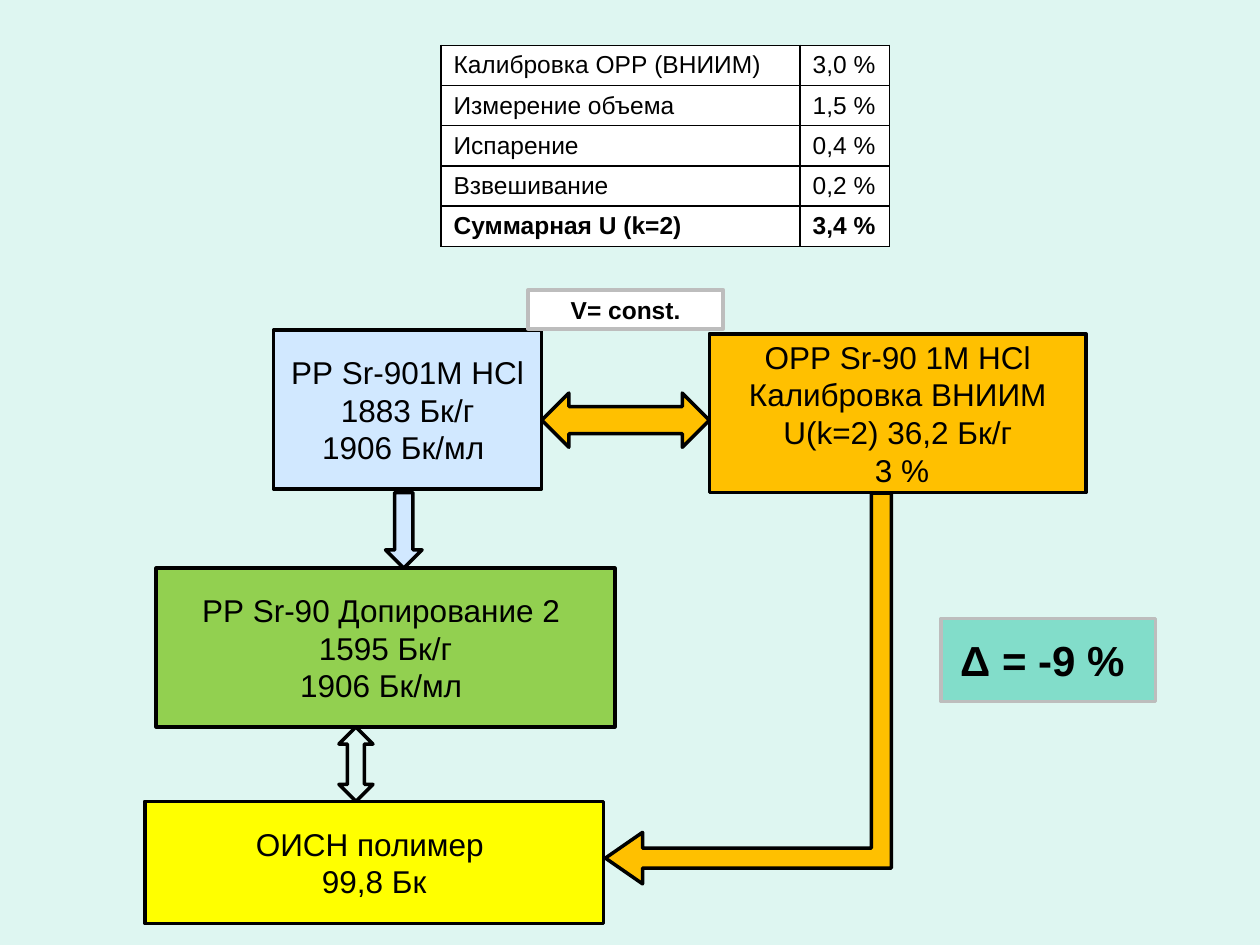
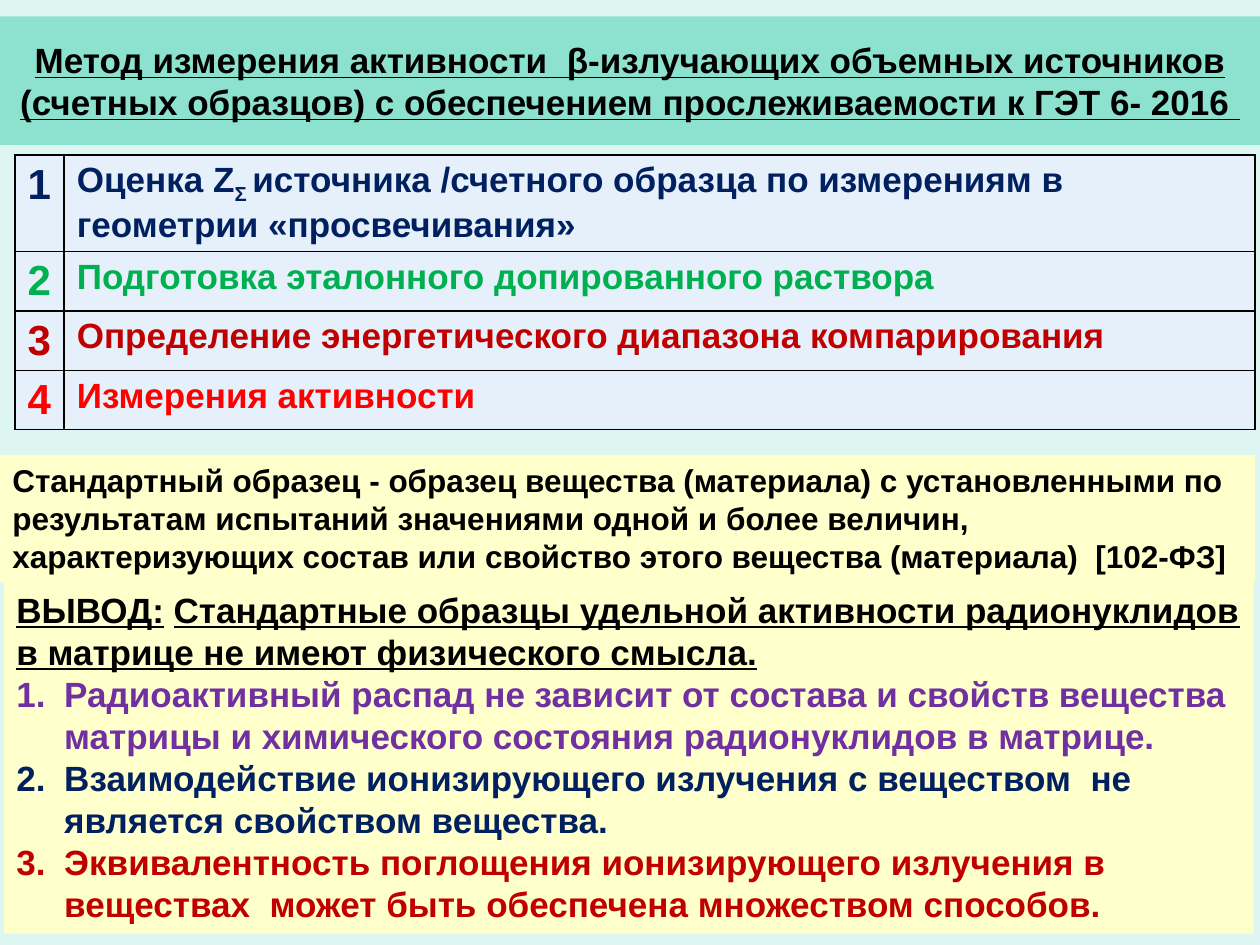
from dataclasses import dataclass
from typing import Optional

import pptx
import pptx.util
import pptx.dml.color
import pptx.enum.shapes
import pptx.enum.text
import pptx.oxml
import pptx.oxml.ns
import pptx.oxml.xmlchemy

RGBColor = pptx.dml.color.RGBColor
SHAPE = pptx.enum.shapes.MSO_SHAPE
ALIGN = pptx.enum.text.PP_ALIGN
ANCHOR = pptx.enum.text.MSO_ANCHOR
qn = pptx.oxml.ns.qn

BLACK = RGBColor(0x00, 0x00, 0x00)
WHITE = RGBColor(0xFF, 0xFF, 0xFF)
GREY = RGBColor(0xBD, 0xBD, 0xBD)
MINT = RGBColor(0xDE, 0xF6, 0xF1)
TEAL = RGBColor(0x82, 0xDD, 0xCA)
TITLE_TEAL = RGBColor(0x8C, 0xE1, 0xCF)
ORANGE = RGBColor(0xFF, 0xC0, 0x00)
SKY = RGBColor(0xD1, 0xE8, 0xFF)
LIME = RGBColor(0x92, 0xD0, 0x50)
YELLOW = RGBColor(0xFF, 0xFF, 0x00)
CREAM = RGBColor(0xFF, 0xFF, 0xCC)
ICE = RGBColor(0xE5, 0xF0, 0xFA)
NAVY = RGBColor(0x00, 0x20, 0x60)
GREEN = RGBColor(0x00, 0xB0, 0x50)
DARK_RED = RGBColor(0xC0, 0x00, 0x00)
RED = RGBColor(0xFF, 0x00, 0x00)
PURPLE = RGBColor(0x70, 0x30, 0xA0)

FONT = "Arial"
COLS, ROWS = 100, 75
SLIDE_W, SLIDE_H = pptx.util.Inches(10), pptx.util.Inches(7.5)


def col(n: float) -> int:
    return pptx.util.Emu(round(SLIDE_W * n / COLS))


def row(n: float) -> int:
    return pptx.util.Emu(round(SLIDE_H * n / ROWS))


@dataclass(frozen=True)
class Area:
    """A place on the grid, in columns and rows."""
    x: float
    y: float
    w: float
    h: float

    def emu(self) -> tuple:
        return col(self.x), row(self.y), col(self.w), row(self.h)


@dataclass(frozen=True)
class Run:
    text: str
    size: float = 18
    color: RGBColor = BLACK
    bold: bool = False
    underline: bool = False
    baseline: int = 0


@dataclass(frozen=True)
class Para:
    runs: tuple
    align: Optional[ALIGN] = ALIGN.LEFT
    numbered: bool = False


@dataclass(frozen=True)
class Figure:
    kind: SHAPE
    area: Area
    fill: RGBColor
    line: Optional[RGBColor] = BLACK
    paras: tuple = ()
    rotation: float = 0
    flip_v: bool = False
    adjustments: tuple = ()


def centred(*lines: str, **run_format) -> tuple:
    return tuple(Para((Run(line, **run_format),), ALIGN.CENTER) for line in lines)


def apply(target, values: dict) -> None:
    for name, value in values.items():
        setattr(target, name, value)


def set_bullet(p, numbered: bool) -> None:
    pPr = p._p.get_or_add_pPr()
    indent = pptx.util.Inches(0.38) if numbered else 0
    pPr.set("marL", str(indent))
    pPr.set("indent", str(-indent))
    if numbered:
        bullet = pptx.oxml.xmlchemy.OxmlElement("a:buAutoNum")
        bullet.set("type", "arabicPeriod")
    else:
        bullet = pptx.oxml.xmlchemy.OxmlElement("a:buNone")
    pPr.append(bullet)


def write(tf, paras: tuple, anchor: ANCHOR) -> None:
    apply(tf, {"word_wrap": True, "vertical_anchor": anchor,
               "auto_size": pptx.enum.text.MSO_AUTO_SIZE.NONE})
    for i, para in enumerate(paras):
        p = tf.paragraphs[0] if i == 0 else tf.add_paragraph()
        set_bullet(p, para.numbered)
        apply(p, {"alignment": para.align, "space_before": pptx.util.Pt(0)})
        for run in para.runs:
            r = p.add_run()
            r.text = run.text
            apply(r.font, {"name": FONT, "size": pptx.util.Pt(run.size),
                           "bold": run.bold, "underline": run.underline})
            r.font.color.rgb = run.color
            if run.baseline:
                r.font._element.set("baseline", str(run.baseline * 1000))


def paint(target, color: RGBColor) -> None:
    target.fill.solid()
    target.fill.fore_color.rgb = color


def add_figure(s, fig: Figure) -> None:
    sp = s.shapes.add_shape(fig.kind, *fig.area.emu())
    sp.shadow.inherit = False
    sp.rotation = fig.rotation
    if fig.flip_v:
        sp._element.spPr.find(qn("a:xfrm")).set("flipV", "1")
    for i, value in enumerate(fig.adjustments):
        sp.adjustments[i] = value
    paint(sp, fig.fill)
    if fig.line is None:
        sp.line.fill.background()
    else:
        sp.line.color.rgb = fig.line
        sp.line.width = pptx.util.Pt(2)
    if fig.paras:
        anchor = ANCHOR.MIDDLE if fig.line is not None else ANCHOR.TOP
        write(sp.text_frame, fig.paras, anchor)


def fill_placeholder(sp, area: Area, fill: RGBColor, paras: tuple, anchor: ANCHOR) -> None:
    apply(sp, dict(zip(("left", "top", "width", "height"), area.emu())))
    paint(sp, fill)
    write(sp.text_frame, paras, anchor)


def add_borders(cell) -> None:
    tcPr = cell._tc.get_or_add_tcPr()
    ns = pptx.oxml.ns.nsdecls("a")
    for i, side in enumerate(("lnL", "lnR", "lnT", "lnB")):
        tcPr.insert(i, pptx.oxml.parse_xml(
            f'<a:{side} {ns} w="12700"><a:solidFill><a:srgbClr val="{BLACK}"/>'
            f'</a:solidFill></a:{side}>'))


def add_grid_table(s, x: float, y: float, widths: tuple, heights: tuple,
                   fill: RGBColor, cells: list) -> None:
    """Add a bordered table; each cell is a tuple of runs."""
    area = Area(x, y, sum(widths), sum(heights))
    table = s.shapes.add_table(len(heights), len(widths), *area.emu()).table
    apply(table, {"first_row": False, "horz_banding": False})
    for column, width in zip(table.columns, widths):
        column.width = col(width)
    for table_row, height, row_cells in zip(table.rows, heights, cells):
        table_row.height = row(height)
        for cell, runs in zip(table_row.cells, row_cells):
            paint(cell, fill)
            add_borders(cell)
            write_cell(cell, runs)


def write_cell(cell, runs: tuple) -> None:
    p = cell.text_frame.paragraphs[0]
    for run in runs:
        r = p.add_run()
        r.text = run.text
        apply(r.font, {"name": FONT, "size": pptx.util.Pt(run.size), "bold": run.bold})
        r.font.color.rgb = run.color
        if run.baseline:
            r.font._element.set("baseline", str(run.baseline * 1000))


def new_slide(prs, layout: int):
    s = prs.slides.add_slide(prs.slide_layouts[layout])
    paint(s.background, MINT)
    return s


UNCERTAINTIES = (
    ("Калибровка ОРР (ВНИИМ)", "3,0 %"),
    ("Измерение объема", "1,5 %"),
    ("Испарение", "0,4 %"),
    ("Взвешивание", "0,2 %"),
    ("Суммарная U (k=2)", "3,4 %"),
)

SCHEME = (
    Figure(SHAPE.RECTANGLE, Area(56.3, 26.5, 29.9, 12.6), ORANGE, paras=centred(
        "ОРР Sr-90 1М HCl", "Калибровка ВНИИМ U(k=2) 36,2 Бк/г", " 3 %")),
    Figure(SHAPE.RECTANGLE, Area(21.7, 26.2, 21.3, 12.6), SKY, paras=centred(
        "РР Sr-901М HCl", "1883 Бк/г", "1906 Бк/мл ")),
    Figure(SHAPE.RECTANGLE, Area(12.4, 45.1, 36.4, 12.6), LIME, paras=centred(
        "РР Sr-90 Допирование 2 ", "1595 Бк/г", "1906 Бк/мл ")),
    Figure(SHAPE.RECTANGLE, Area(11.5, 63.6, 36.4, 9.7), YELLOW, paras=centred(
        "ОИСН полимер ", "99,8 Бк")),
    Figure(SHAPE.UP_DOWN_ARROW, Area(47.5, 26.7, 4.3, 13.3), ORANGE, rotation=90),
    Figure(SHAPE.RECTANGLE, Area(41.9, 23, 15.5, 3.1), WHITE, GREY,
           centred("V= const.", size=14, bold=True)),
    Figure(SHAPE.UP_DOWN_ARROW, Area(26.9, 57.7, 2.7, 5.9), MINT),
    Figure(SHAPE.BENT_UP_ARROW, Area(43.9, 43.3, 31, 22.7), ORANGE, rotation=90,
           flip_v=True, adjustments=(0.07, 0.09, 0.13)),
    Figure(SHAPE.RECTANGLE, Area(74.7, 49.1, 17, 6.6), TEAL, GREY,
           centred("Δ = -9 % ", size=24, bold=True)),
    Figure(SHAPE.DOWN_ARROW, Area(30.6, 39.1, 2.9, 6), SKY),
)

TITLE = ("Метод измерения активности  β-излучающих объемных источников "
         "(счетных образцов) с обеспечением прослеживаемости к ГЭТ 6- 2016 ")

STEPS = (
    (NAVY, (("Оценка Z", 0), ("Σ ", -25),
            ("источника /счетного образца по измерениям в геометрии «просвечивания»", 0))),
    (GREEN, (("Подготовка эталонного допированного раствора", 0),)),
    (DARK_RED, (("Определение энергетического диапазона компарирования", 0),)),
    (RED, (("Измерения активности", 0),)),
)

DEFINITION = ("Стандартный образец - образец вещества (материала) с установленными по "
              "результатам испытаний значениями одной и более величин, характеризующих "
              "состав или свойство этого вещества (материала)  [102-ФЗ]")

CONCLUSION = (
    ("ВЫВОД:", True),
    (" ", False),
    ("Стандартные образцы удельной активности радионуклидов в матрице "
     "не имеют физического смысла.", True),
)

REASONS = (
    (PURPLE, "Радиоактивный распад не зависит от состава и свойств вещества матрицы "
             "и химического состояния радионуклидов в матрице."),
    (NAVY, "Взаимодействие ионизирующего излучения с веществом  не является "
           "свойством вещества."),
    (DARK_RED, "Эквивалентность поглощения ионизирующего излучения в веществах  "
               "может быть обеспечена множеством способов."),
)


def build_scheme_slide(prs) -> None:
    s = new_slide(prs, 6)
    cells = [[(Run(text, 14, bold=pair == UNCERTAINTIES[-1]),) for text in pair]
             for pair in UNCERTAINTIES]
    add_grid_table(s, 35, 3.6, (28.5, 7.1), (3.18,) * len(cells), WHITE, cells)
    for fig in SCHEME:
        add_figure(s, fig)


def build_method_slide(prs) -> None:
    s = new_slide(prs, 1)
    fill_placeholder(s.shapes.title, Area(0, 1.3, 100, 10.2), TITLE_TEAL,
                     centred(TITLE, size=20, bold=True, underline=True), ANCHOR.MIDDLE)
    cells = [[(Run(str(n), 24, color, True),),
              tuple(Run(text, 20, color, True, baseline=base) for text, base in parts)]
             for n, (color, parts) in enumerate(STEPS, 1)]
    add_grid_table(s, 1.2, 12.3, (3.9, 94.5), (7.6, 4.7, 4.7, 4.7), ICE, cells)
    conclusion = Para(tuple(Run(text, 20, bold=True, underline=line)
                            for text, line in CONCLUSION))
    reasons = tuple(Para((Run(text, 20, color, True),), numbered=True)
                    for color, text in REASONS)
    fill_placeholder(s.placeholders[1], Area(0.3, 46.2, 99.2, 27.9), CREAM,
                     (conclusion, *reasons), ANCHOR.TOP)
    add_figure(s, Figure(SHAPE.RECTANGLE, Area(0, 36.1, 99.6, 10.1), CREAM, None,
                         (Para((Run(DEFINITION, bold=True),)),)))


def main() -> None:
    prs = pptx.Presentation()
    apply(prs, {"slide_width": SLIDE_W, "slide_height": SLIDE_H})
    build_scheme_slide(prs)
    build_method_slide(prs)
    prs.save("out.pptx")


if __name__ == "__main__":
    main()
